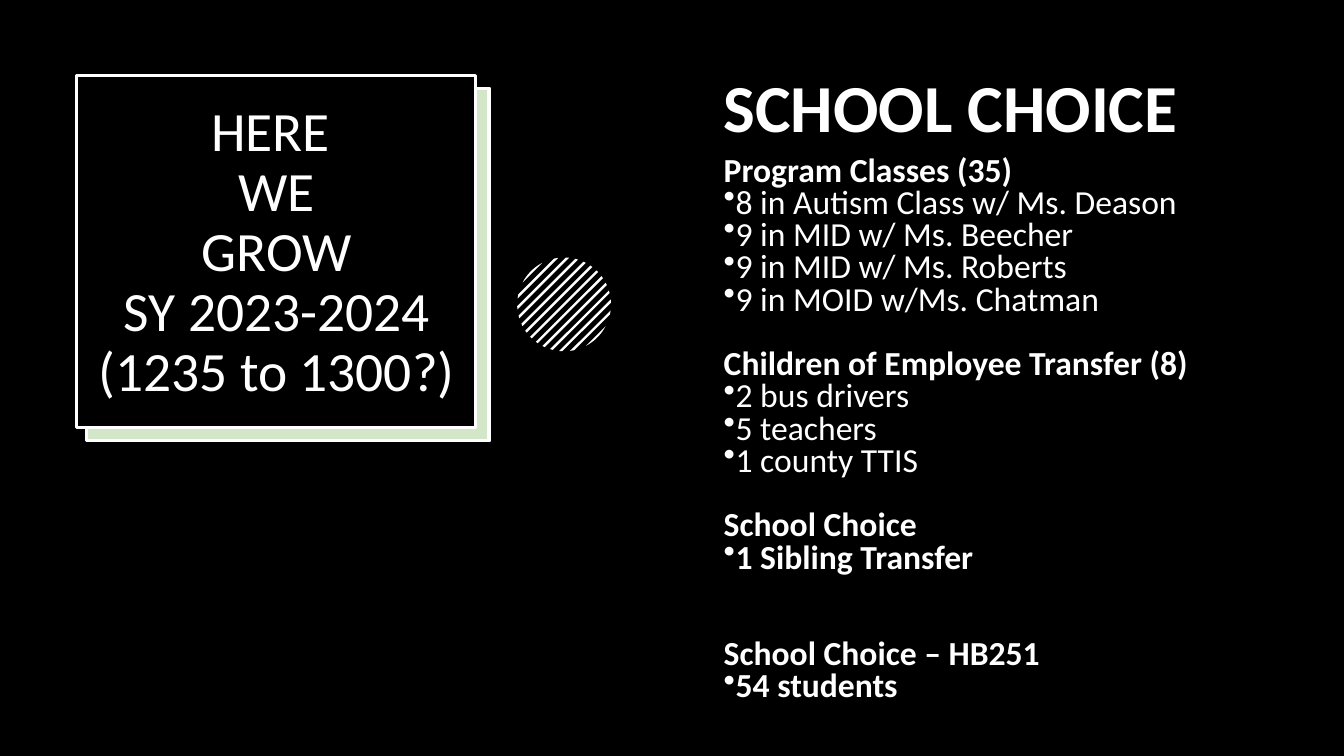
from math import acos, cos, pi, sin

from lxml.etree import SubElement
from pptx import Presentation
from pptx.dml.color import RGBColor
from pptx.enum.shapes import MSO_SHAPE
from pptx.enum.text import MSO_ANCHOR, PP_ALIGN
from pptx.oxml.ns import qn
from pptx.util import Inches, Pt

COLORS = {"black": "000000", "white": "FFFFFF", "green": "70AD47"}
LINE_PITCH = 23  # height in points of one line of the 24 pt list

# heading, empty lines above it, items, whether the items are bold
SECTIONS = [
    ("Program Classes (35)", 0,
     ["8 in Autism Class w/ Ms. Deason", "9 in MID w/ Ms. Beecher",
      "9 in MID w/ Ms. Roberts", "9 in MOID w/Ms. Chatman"], False),
    ("Children of Employee Transfer (8)", 1,
     ["2 bus drivers", "5 teachers", "1 county TTIS"], False),
    ("School Choice", 1, ["1 Sibling Transfer"], True),
    ("School Choice – HB251", 2, ["54 students"], True),
]


class SlideBuilder:
    def __init__(self, slide, font):
        self.slide = slide
        self.font = font

    def color(self, name):
        return RGBColor.from_string(COLORS[name])

    def paint(self, shape, fill, line=None, alpha=None):
        shape.shadow.inherit = False
        shape.fill.solid()
        shape.fill.fore_color.rgb = self.color(fill)
        if alpha is not None:
            srgb = shape.fill._xPr.find(".//" + qn("a:srgbClr"))
            SubElement(srgb, qn("a:alpha"), val=str(alpha * 1000))
        if line:
            shape.line.color.rgb = self.color(line)
            shape.line.width = Pt(2.25)
        else:
            shape.line.fill.background()

    def rectangle(self, left, top, width, height, fill, line=None, alpha=None):
        shape = self.slide.shapes.add_shape(
            MSO_SHAPE.RECTANGLE, Inches(left), Inches(top), Inches(width), Inches(height))
        self.paint(shape, fill, line, alpha)

    def striped_circle(self, center_x, center_y, radius, pitch, thickness, per_side):
        """Draw diagonal stripes, each cut off by the circle's edge."""
        arc_steps = 6
        for index in range(-per_side, per_side + 1):
            edges = [index * pitch + side * thickness / 2 for side in (-1, 1)]
            start, end = (acos(max(-1, min(1, edge / radius))) for edge in edges)
            arc = [start + (end - start) * step / arc_steps for step in range(arc_steps + 1)]
            angles = [pi / 4 + a for a in arc] + [pi / 4 - a for a in reversed(arc)]
            points = [(Inches(center_x + radius * cos(a)), Inches(center_y + radius * sin(a)))
                      for a in angles]
            outline = self.slide.shapes.build_freeform(*points[0])
            outline.add_line_segments(points[1:], close=True)
            self.paint(outline.convert_to_shape(), "white")

    def text_frame(self, left, top, width, height, anchor=MSO_ANCHOR.TOP):
        frame = self.slide.shapes.add_textbox(
            Inches(left), Inches(top), Inches(width), Inches(height)).text_frame
        frame.word_wrap = True
        frame.vertical_anchor = anchor
        return frame

    def style(self, paragraph, text, size, spacing, bold=False, before=0, after=0):
        paragraph.text = text
        paragraph.line_spacing = spacing
        paragraph.space_before = Pt(before)
        paragraph.space_after = Pt(after)
        paragraph.font.name = self.font
        paragraph.font.size = Pt(size)
        paragraph.font.bold = bold
        paragraph.font.color.rgb = self.color("white")

    def bullet(self, paragraph):
        properties = paragraph._p.get_or_add_pPr()
        properties.set("marL", "0")
        properties.set("indent", str(-Inches(0.25)))
        mark = SubElement(properties, qn("a:buChar"), char="•")
        properties.find(qn("a:defRPr")).addprevious(mark)


def main():
    presentation = Presentation()
    presentation.slide_width = Inches(13.33)
    presentation.slide_height = Inches(7.5)
    builder = SlideBuilder(
        presentation.slides.add_slide(presentation.slide_layouts[6]), "Calibri")

    builder.rectangle(0, 0, 13.33, 7.5, "black")
    builder.rectangle(0.86, 0.88, 3.99, 3.49, "white", "white")
    builder.rectangle(0.86, 0.88, 3.99, 3.49, "green", "white", alpha=30)
    builder.rectangle(0.76, 0.75, 3.96, 3.49, "black", "white")

    title = builder.text_frame(0.81, 0.94, 3.87, 3.15, MSO_ANCHOR.MIDDLE).paragraphs[0]
    builder.style(title, "HERE \vWE\vGROW\vSY 2023-2024\v(1235 to 1300?)", 39.6, 0.9)
    title.alignment = PP_ALIGN.CENTER

    builder.striped_circle(5.595, 3.02, radius=0.465, pitch=0.076, thickness=0.024, per_side=6)

    choices = builder.text_frame(7.08, 0.75, 5.44, 6.6)
    builder.style(choices.paragraphs[0], "SCHOOL CHOICE", 48, 0.8, bold=True, after=8)
    for heading, empty_lines, items, bold_items in SECTIONS:
        builder.style(choices.add_paragraph(), heading, 24, 0.8, bold=True,
                      before=empty_lines * LINE_PITCH)
        for item in items:
            entry = choices.add_paragraph()
            builder.style(entry, item, 24, 0.8, bold=bold_items)
            builder.bullet(entry)

    presentation.save("out.pptx")


if __name__ == "__main__":
    main()
